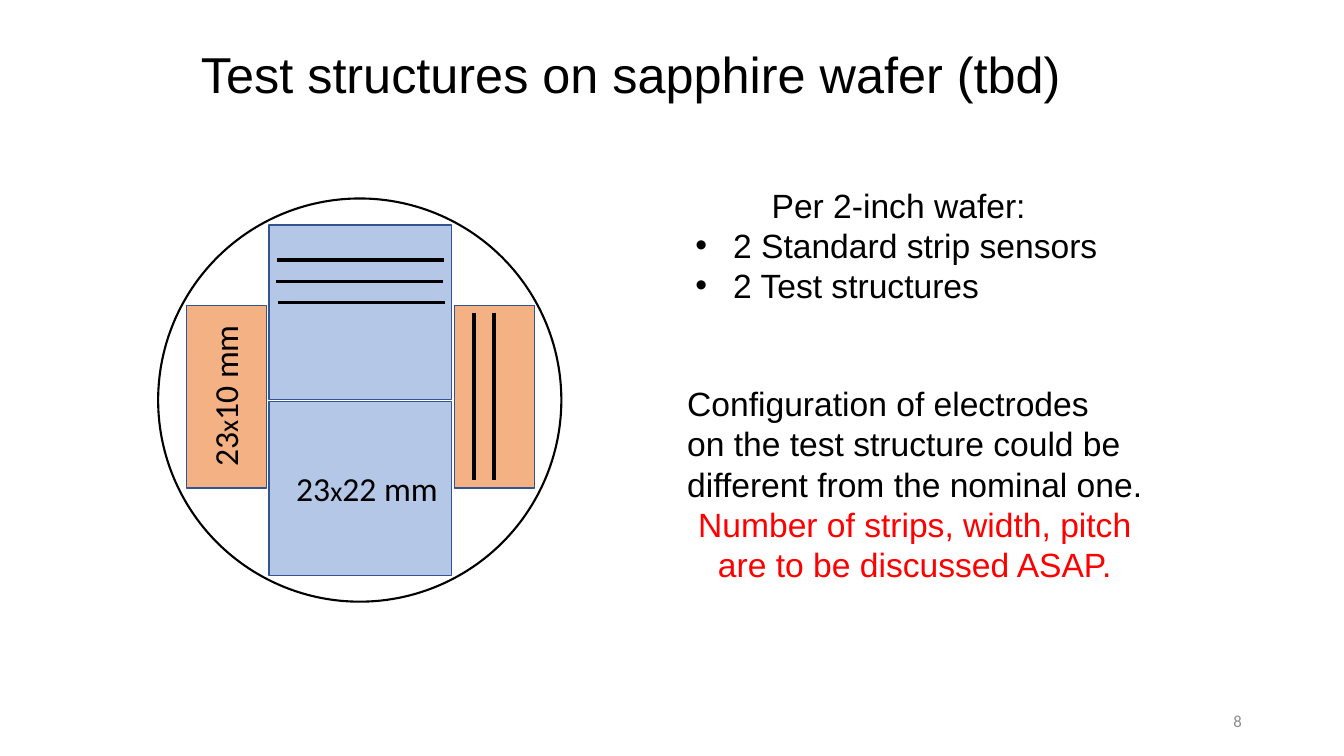
from lxml import etree
from pptx import Presentation
from pptx.dml.color import RGBColor
from pptx.enum import shapes, text
from pptx.oxml import ns
from pptx.util import Pt

COLORS = {"black": "000000", "red": "FF0000", "grey": "8C8C8C",
          "sensor": "B4C7E7", "test": "F4B183", "edge": "325491"}
SHAPE, ALIGN = shapes.MSO_SHAPE, text.PP_ALIGN


def rgb(name):
    return RGBColor.from_string(COLORS[name])


def style_run(r, size, font="Arial", color="black"):
    r.font.size, r.font.name = Pt(size), font
    r.font.color.rgb = rgb(color)


def add_text(s, box, lines, size, font="Arial", color="black", align=ALIGN.LEFT, fit=True):
    """Text box with one paragraph per line; fit keeps each line unwrapped."""
    tb = s.shapes.add_textbox(*map(Pt, box))
    tf = tb.text_frame
    tf.text = "\n".join(lines)
    tf.word_wrap = not fit
    if fit:
        tf.auto_size = text.MSO_AUTO_SIZE.SHAPE_TO_FIT_TEXT
    else:
        tf.vertical_anchor = text.MSO_ANCHOR.MIDDLE
    for p in tf.paragraphs:
        p.alignment = align
        style_run(p.runs[0], size, font, color)
    return tb


def add_bullet(p, indent):
    pPr = p._p.get_or_add_pPr()
    pPr.set("marL", str(Pt(indent)))
    pPr.set("indent", str(-Pt(indent)))
    etree.SubElement(pPr, ns.qn("a:buFont")).set("typeface", "Arial")
    etree.SubElement(pPr, ns.qn("a:buChar")).set("char", "•")


def add_block(s, kind, box, fill, edge, width):
    sp = s.shapes.add_shape(kind, *map(Pt, box))
    sp.shadow.inherit = False
    if fill:
        sp.fill.solid()
        sp.fill.fore_color.rgb = rgb(fill)
    else:
        sp.fill.background()
    sp.line.color.rgb, sp.line.width = rgb(edge), Pt(width)


def add_strip(s, x, y, dx, dy):
    ln = s.shapes.add_connector(shapes.MSO_CONNECTOR.STRAIGHT, *map(Pt, (x, y, x + dx, y + dy)))
    ln.line.color.rgb, ln.line.width = rgb("black"), Pt(2.5)
    etree.SubElement(ln._element.spPr, ns.qn("a:effectLst"))


def add_size_label(s, box, short_side, rotation=0):
    tb = add_text(s, box, ["23"], 24, "Calibri")
    p = tb.text_frame.paragraphs[0]
    for part, size in (("x", 20), (f"{short_side} mm", 24)):
        r = p.add_run()
        r.text = part
        style_run(r, size, "Calibri")
    tb.rotation = rotation


def draw_wafer(s, x, y, d):
    add_block(s, SHAPE.OVAL, (x, y, d, d), None, "black", 1.5)
    long_side, strip = 130.3, 119

    # Two standard sensors, stacked
    sensor_x, sensor_y = x + 79.2, y + 18.8
    for i in range(2):
        add_block(s, SHAPE.RECTANGLE, (sensor_x, sensor_y + i * 126, long_side, 124.6),
                  "sensor", "edge", 1)

    # Test structures on both sides
    test_y = y + 76.4
    for dx in (211.7, 20.2):
        add_block(s, SHAPE.RECTANGLE, (x + dx, test_y, 57, long_side), "test", "edge", 1)

    # Electrode strips
    for i, dx in enumerate((5.8, 5.3, 6.5)):
        add_strip(s, sensor_x + dx, sensor_y + 25.2 + i * 15.1, strip, 0)
    for i in range(2):
        add_strip(s, x + 225.4 + i * 14.4, test_y + 5.7, 0, strip)

    # Dimensions
    add_size_label(s, (x + 91.5, y + 188.7, 118, 36), 22)
    add_size_label(s, (x - 11.5, y + 121.7, 118, 36), 10, 270)


def draw_notes(s, x, y):
    # Wafer contents
    contents = add_text(s, (x + 5.8, y, 304.6, 94.3),
                        ["Per 2-inch wafer:", "2 Standard strip sensors", "2 Test structures"], 24)
    heading, *items = contents.text_frame.paragraphs
    heading.alignment = ALIGN.CENTER
    for p in items:
        add_bullet(p, 27)

    # Electrode configuration, with the open question in red
    config = add_text(s, (x, y + 141.8, 342.7, 152.6),
                      ["Configuration of electrodes", "on the test structure could be",
                       "different from the nominal one.",
                       "Number of strips, width, pitch", "are to be discussed ASAP."], 24)
    for p in config.text_frame.paragraphs[3:]:
        p.alignment = ALIGN.CENTER
        p.runs[0].font.color.rgb = rgb("red")


def draw_frame(s):
    # Title and slide number
    title = add_text(s, (36.7, 20.9, 828, 68.4), ["Test structures on sapphire wafer (tbd)"],
                     36, align=ALIGN.CENTER, fit=False)
    title.text_frame.paragraphs[0].line_spacing = 0.9
    add_text(s, (678.2, 500.4, 216, 28.8), ["8"], 12, "Calibri", "grey", ALIGN.RIGHT, fit=False)


def main():
    prs = Presentation()
    prs.slide_width, prs.slide_height = Pt(960), Pt(540)
    s = prs.slides.add_slide(prs.slide_layouts[6])
    draw_frame(s)
    draw_wafer(s, 113, 141.8, 288)
    draw_notes(s, 483.8, 128.2)
    prs.save("out.pptx")


if __name__ == "__main__":
    main()
